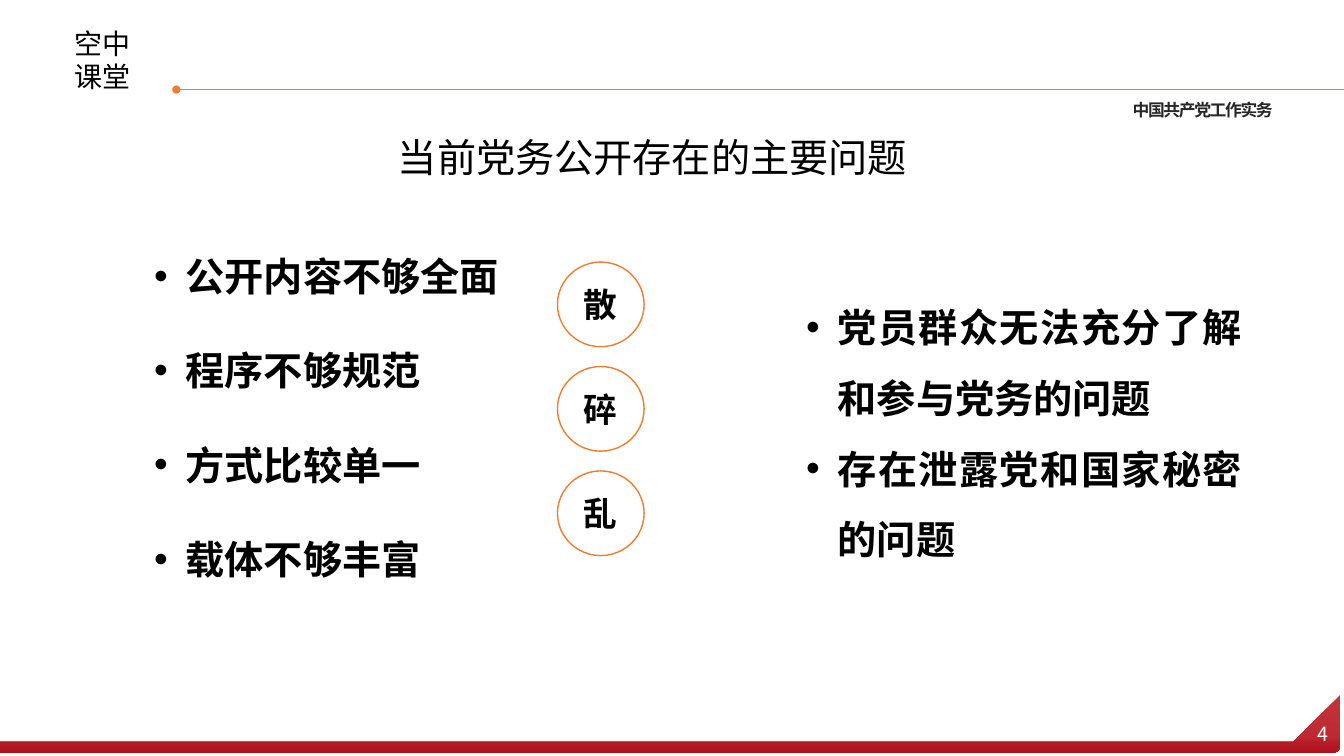
import copy
import math

import pptx
import pptx.dml.color
import pptx.enum.shapes
import pptx.enum.text
import pptx.oxml
import pptx.oxml.ns
import pptx.util

Pt = pptx.util.Pt
qn = pptx.oxml.ns.qn
Align = pptx.enum.text.PP_ALIGN
AutoSize = pptx.enum.text.MSO_AUTO_SIZE
FONT = "Noto Sans CJK SC"
ORANGE = "ED7D31"


def color(value):
    return pptx.dml.color.RGBColor.from_string(value)


def write(shape, lines, size, ink="000000", bold=False, bullet=False, tracking=0, **layout):
    frame = shape.text_frame
    for index, line in enumerate(lines):
        paragraph = frame.paragraphs[0] if index == 0 else frame.add_paragraph()
        if bullet:
            properties = paragraph._p.get_or_add_pPr()
            properties.set("marL", str(Pt(22.5)))
            properties.set("indent", str(-Pt(22.5)))
            properties.makeelement
            pptx.oxml.ns
            font_tag = properties.makeelement(qn("a:buFont"), {"typeface": "Arial"})
            character_tag = properties.makeelement(qn("a:buChar"), {"char": "•"})
            properties.extend([font_tag, character_tag])
        for name, value in layout.items():
            setattr(paragraph, name, value)
        run = paragraph.add_run()
        run.text = line
        for name, value in {"name": FONT, "size": Pt(size), "bold": bold}.items():
            setattr(run.font, name, value)
        run.font.color.rgb = color(ink)
        run_properties = run._r.get_or_add_rPr()
        run_properties.append(run_properties.makeelement(qn("a:ea"), {"typeface": FONT}))
        if tracking:
            run_properties.set("spc", str(tracking))


presentation = pptx.Presentation()
presentation.slide_width = Pt(960)
presentation.slide_height = Pt(540)
slide = presentation.slides.add_slide(presentation.slide_layouts[6])
shapes = slide.shapes

header_line = shapes.add_connector(
    pptx.enum.shapes.MSO_CONNECTOR.STRAIGHT, Pt(126), Pt(64), Pt(960), Pt(64)
)
header_line.line.color.rgb = color(ORANGE)
header_line.line.width = Pt(0.5)
line_properties = header_line.line._get_or_add_ln()
line_properties.append(line_properties.makeelement(qn("a:headEnd"), {"type": "oval"}))
connector_properties = header_line._element.spPr
connector_properties.append(connector_properties.makeelement(qn("a:effectLst"), {}))

corner = [
    (951.8 + 5.8 * math.cos(math.radians(angle)), 532 + 5.8 * math.sin(math.radians(angle)))
    for angle in range(0, 91, 15)
]
outline = [*corner, (0, 537.8), (0, 529.9), (923.8, 529.9)]
builder = shapes.build_freeform(Pt(957.6), Pt(496.1), scale=1.0)
builder.add_line_segments([(Pt(x), Pt(y)) for x, y in outline], close=True)
footer = builder.convert_to_shape()
footer.shadow.inherit = False
footer.line.fill.background()
footer.fill.gradient()
footer.fill.gradient_angle = 270
stop_list = footer._element.spPr.find(qn("a:gradFill")).find(qn("a:gsLst"))
for stop in list(stop_list)[1:]:
    stop_list.remove(stop)
for _ in range(3):
    stop_list.append(copy.deepcopy(stop_list[0]))
footer_colors = [(0, "C2353B"), (0.74, "BE2A32"), (0.83, "B41B26"), (1, "AF111C")]
for stop, (position, value) in zip(footer.fill.gradient_stops, footer_colors):
    stop.position = position
    stop.color.rgb = color(value)

text_boxes = [
    ((802, 67.7, 146.9, 21.6), True, ["中国共产党工作实务"],
     {"size": 12, "ink": "262626", "bold": True, "tracking": -100, "alignment": Align.JUSTIFY}),
    ((933.8, 511.9, 22.3, 24.5), False, ["4"],
     {"size": 14, "ink": "FFFFFF", "alignment": Align.CENTER}),
    ((46.1, 15.1, 54.7, 55.4), False, ["空中", "课堂"], {"size": 20}),
    ((277.2, 91.4, 398.2, 41), True, ["当前党务公开存在的主要问题"], {"size": 28}),
    ((103, 143.3, 412.6, 278.6), True,
     ["公开内容不够全面", "程序不够规范", "方式比较单一", "载体不够丰富"],
     {"size": 28, "bold": True, "bullet": True, "line_spacing": 2.0}),
    ((568.8, 196.6, 325.4, 211), True,
     ["党员群众无法充分了解和参与党务的问题", "存在泄露党和国家秘密的问题"],
     {"size": 28, "bold": True, "bullet": True, "line_spacing": 1.5,
      "alignment": Align.JUSTIFY}),
]
for box, wrap, lines, formatting in text_boxes:
    text_box = shapes.add_textbox(*map(Pt, box))
    text_box.text_frame.word_wrap = wrap
    text_box.text_frame.auto_size = AutoSize.SHAPE_TO_FIT_TEXT
    write(text_box, lines, **formatting)

for index, word in enumerate("散碎乱"):
    circle = shapes.add_shape(
        pptx.enum.shapes.MSO_SHAPE.OVAL, Pt(398.2), Pt(187.2 + 74.6 * index), Pt(61.9), Pt(60.5)
    )
    circle.shadow.inherit = False
    circle.fill.solid()
    circle.fill.fore_color.rgb = color("FFFFFF")
    circle.line.color.rgb = color(ORANGE)
    circle.line.width = Pt(1)
    circle.text_frame.vertical_anchor = pptx.enum.text.MSO_ANCHOR.MIDDLE
    write(circle, [word], 24, bold=True, alignment=Align.CENTER)

presentation.save("out.pptx")
